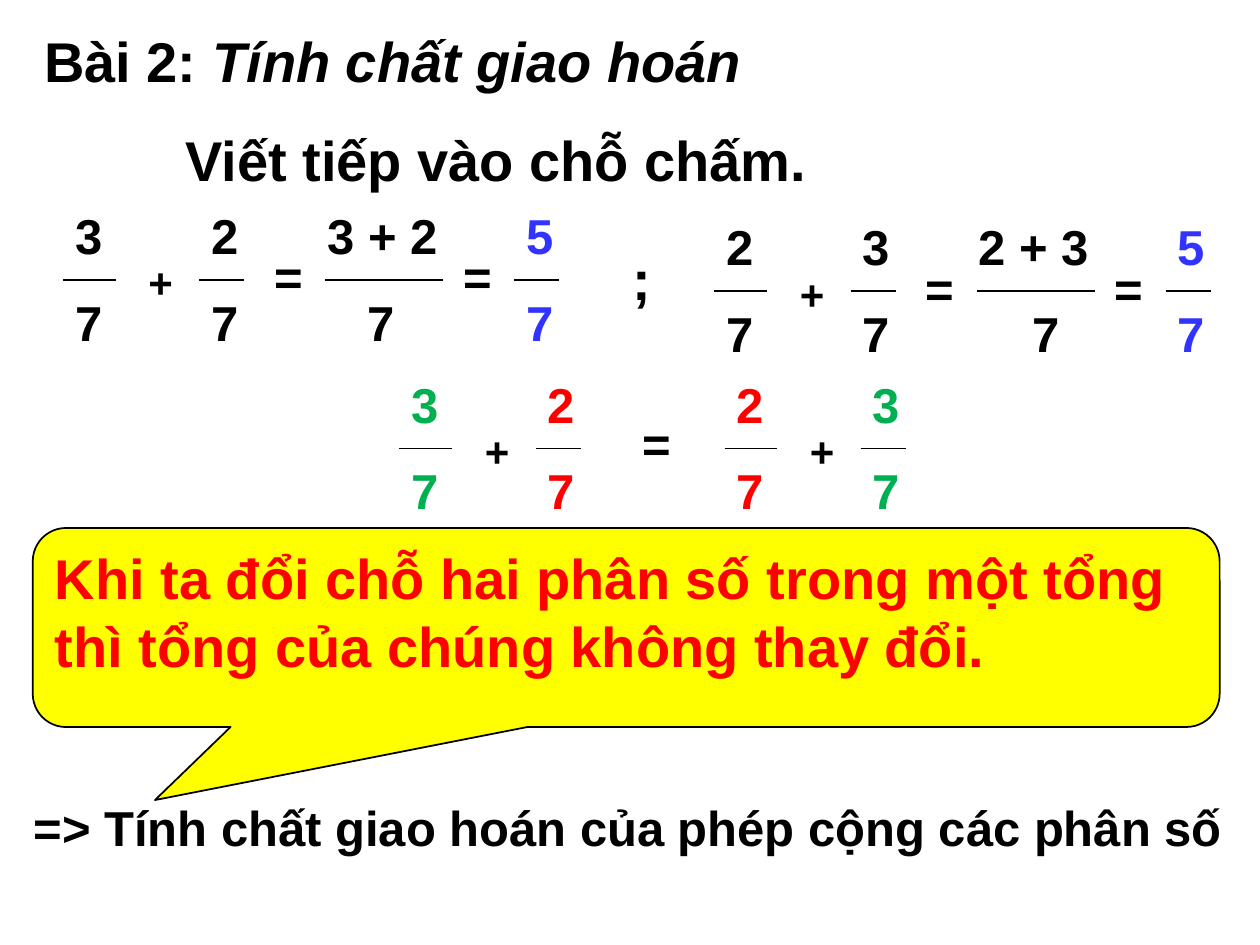
from pptx import Presentation
from pptx.dml.color import RGBColor
from pptx.enum import shapes, text
from pptx.util import Inches, Pt
from lxml import etree

BLACK, RED, GREEN, BLUE, YELLOW = "000000", "FF0000", "00B050", "3333FF", "FFFF00"
A = "http://schemas.openxmlformats.org/drawingml/2006/main"


def rgb(value):
    return RGBColor.from_string(value)


def style(p, size, color=BLACK, before=0, indent=0):
    p.alignment = text.PP_ALIGN.LEFT
    p.space_before = Pt(before)
    p.font.name, p.font.size, p.font.bold = "Arial", Pt(size), True
    p.font.color.rgb = rgb(color)
    if indent:
        p._p.get_or_add_pPr().set("marL", str(Inches(indent)))


def label(slide, box, words, size=28, color=BLACK, indent=0):
    """Stack the given words, one paragraph each; indent the later ones."""
    tf = slide.shapes.add_textbox(*map(Inches, box)).text_frame
    tf.word_wrap = True
    for i, word in enumerate(words):
        p = tf.paragraphs[0] if i == 0 else tf.add_paragraph()
        p.text = word
        style(p, size, color, 16 if i else 0, indent if i else 0)
    return tf


def fraction(slide, left, top, numerator, color=BLACK, bar=0.36):
    label(slide, (left, top + 0.03, 0.6, 1.22), [numerator, "7"], color=color)
    fraction_bar(slide, left, top, bar)


def fraction_bar(slide, left, top, length):
    y = Inches(top + 0.67)
    line = slide.shapes.add_connector(
        shapes.MSO_CONNECTOR.STRAIGHT, Inches(left), y, Inches(left + length), y)
    line.line.color.rgb = rgb(BLACK)
    line.line.width = Pt(1)
    etree.SubElement(line._element.spPr, f"{{{A}}}effectLst")


def equals(slide, left, top):
    label(slide, (left, top + 0.36, 0.5, 0.57), ["="])


def addition(slide, left, top, first, second, colors=(BLACK, BLACK)):
    fraction(slide, left, top, first, colors[0], bar=0.42)
    label(slide, (left + 0.58, top + 0.44, 0.33, 0.51), ["+"], 24)
    fraction(slide, left + 1.08, top, second, colors[1])


def worked_sum(slide, left, top, first, second, indent):
    addition(slide, left, top, first, second)
    equals(slide, left + 1.58, top)
    label(slide, (left + 2, top + 0.03, 1.33, 1.22),
          [f"{first} + {second}", "7"], indent=indent)
    fraction_bar(slide, left + 2.08, top, 0.94)
    equals(slide, left + 3.08, top)
    fraction(slide, left + 3.58, top, "5", BLUE)


def heading(slide, left, top, width, height):
    title = slide.shapes.title
    title.left, title.top, title.width, title.height = map(
        Inches, (left, top, width, height))
    tf = title.text_frame
    tf.auto_size = text.MSO_AUTO_SIZE.NONE
    tf.vertical_anchor = text.MSO_ANCHOR.TOP
    p = tf.paragraphs[0]
    p.add_run().text = "Bài 2: "
    r = p.add_run()
    r.text = "Tính chất giao hoán"
    r.font.italic = True
    style(p, 32)
    p = tf.add_paragraph()
    p.text = "Viết tiếp vào chỗ chấm."
    style(p, 32, before=18, indent=1.12)


def rule_callout(slide, left, top, width, height):
    sp = slide.shapes.add_shape(
        shapes.MSO_SHAPE.ROUNDED_RECTANGULAR_CALLOUT,
        *map(Inches, (left, top, width, height)))
    for i, value in enumerate((-0.397, 0.867, 0.167)):
        sp.adjustments[i] = value
    sp.shadow.inherit = False
    sp.fill.solid()
    sp.fill.fore_color.rgb = rgb(YELLOW)
    sp.line.color.rgb = rgb(BLACK)
    sp.line.width = Pt(1)
    tf = sp.text_frame
    tf.word_wrap = True
    tf.vertical_anchor = text.MSO_ANCHOR.TOP
    p = tf.paragraphs[0]
    p.text = "Khi ta đổi chỗ hai phân số trong một tổng thì tổng của chúng không thay đổi."
    style(p, 32, RED)


def main():
    prs = Presentation()
    prs.slide_width, prs.slide_height = Inches(10), Inches(7.5)
    slide = prs.slides.add_slide(prs.slide_layouts[5])
    slide.background.fill.solid()
    slide.background.fill.fore_color.rgb = rgb("FFFFFF")

    # Rule and conclusion
    rule_callout(slide, 0.26, 4.19, 9.42, 1.58)
    tf = label(slide, (0.17, 6.33, 9.83, 0.52),
               ["=> Tính chất giao hoán của phép cộng các phân số"])
    tf.paragraphs[0].line_spacing = 0.9

    # Two worked sums, side by side
    worked_sum(slide, 0.5, 1.55, "3", "2", 0.32)
    label(slide, (4.92, 1.89, 0.33, 0.64), [";"], 32)
    worked_sum(slide, 5.67, 1.64, "2", "3", 0.43)

    # The sums compared
    addition(slide, 3.17, 2.89, "3", "2", (GREEN, RED))
    equals(slide, 5, 2.87)
    addition(slide, 5.75, 2.89, "2", "3", (RED, GREEN))

    heading(slide, 0.25, 0.16, 7, 1.45)
    prs.save("out.pptx")


if __name__ == "__main__":
    main()
